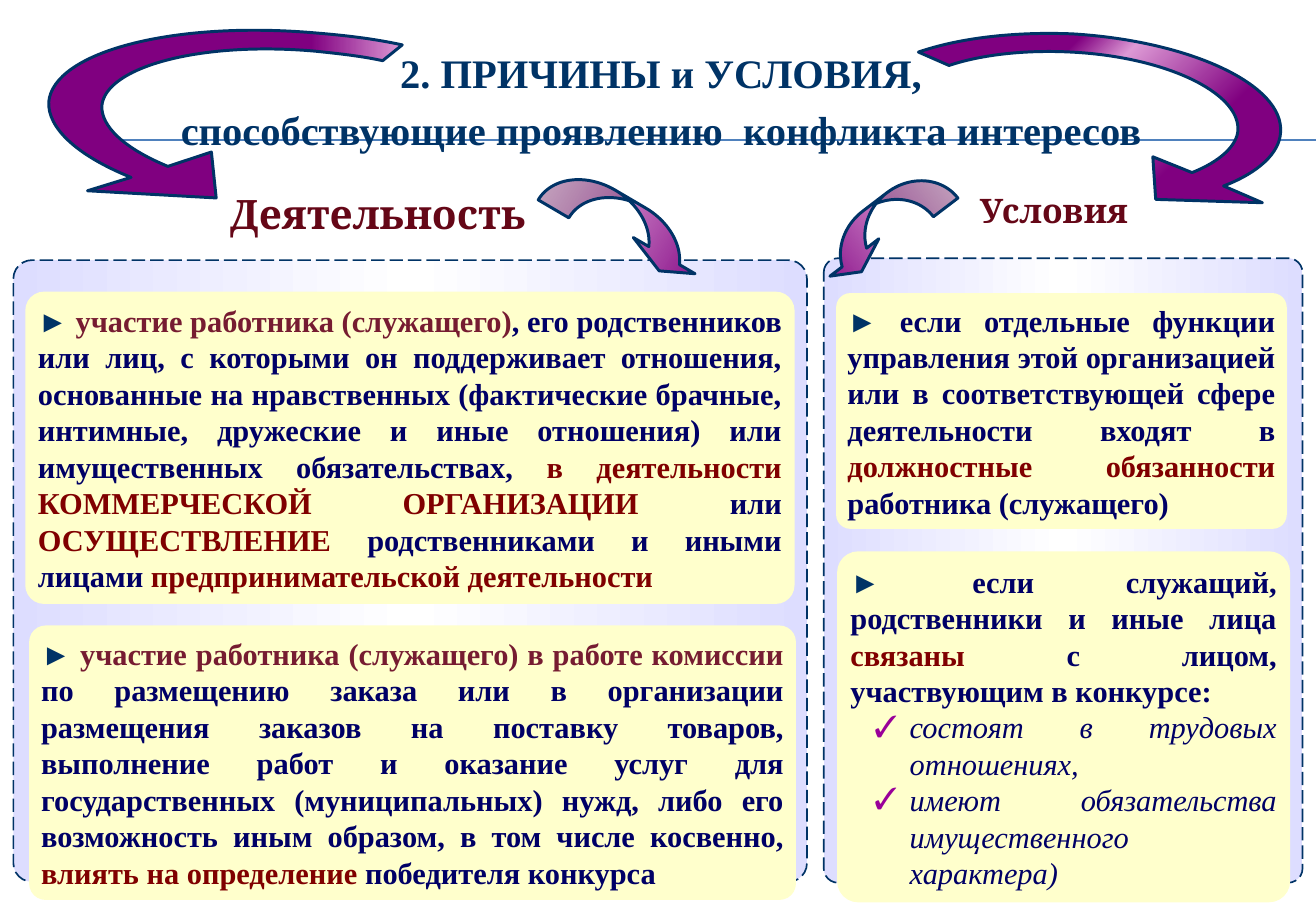
"""Slide on the causes and conditions that lead to a conflict of interest."""
from lxml import etree
from pptx import Presentation, util as u
from pptx.dml.color import RGBColor
from pptx.enum import dml, shapes, text
from pptx.oxml.ns import qn

NAVY = RGBColor(0x00, 0x33, 0x66)
INK = RGBColor(0x00, 0x00, 0x66)
WINE = RGBColor(0x76, 0x1C, 0x31)
MAROON = RGBColor(0x80, 0x00, 0x00)
BURGUNDY = RGBColor(0x65, 0x07, 0x17)
RULE_BLUE = RGBColor(0x4F, 0x81, 0xBD)
CREAM = RGBColor(0xFF, 0xFF, 0xCC)
LILAC = RGBColor(0xDD, 0xDD, 0xFF)
WHITE = RGBColor(0xFF, 0xFF, 0xFF)
PINK = RGBColor(0xFE, 0xDA, 0xF6)
ORCHID = RGBColor(0xDD, 0x99, 0xD5)
PURPLE = RGBColor(0x80, 0x00, 0x80)
TICK = RGBColor(0x99, 0x00, 0x99)
SERIF = "Times New Roman"


def paint(shape, stops, line_width, angle=0):
    """Give a shape a gradient and a navy outline."""
    shape.shadow.inherit = False
    shape.fill.gradient()
    shape.fill.gradient_angle = angle
    stop_list = shape.element.spPr.find(qn("a:gradFill")).find(qn("a:gsLst"))
    for old_stop in list(stop_list):
        stop_list.remove(old_stop)
    for percent, color in stops:
        stop = etree.SubElement(stop_list, qn("a:gs"), pos=str(percent * 1000))
        etree.SubElement(stop, qn("a:srgbClr"), val=str(color))
    shape.line.color.rgb = NAVY
    shape.line.width = u.Pt(line_width)


def style(run, font_name, size, color, bold=True):
    """Format one run; text that is not bold is italic."""
    run.font.name = font_name
    run.font.size = u.Pt(size)
    run.font.color.rgb = color
    run.font.bold = bold
    run.font.italic = not bold


deck = Presentation()
deck.slide_width, deck.slide_height = u.Cm(27.51), u.Cm(19.05)
slide = deck.slides.add_slide(deck.slide_layouts[6])
items = slide.shapes

for rule_y in (2.92, 2.93):
    rule = items.add_connector(shapes.MSO_CONNECTOR.STRAIGHT, u.Cm(1.55), u.Cm(rule_y), u.Cm(27.51), u.Cm(rule_y))
    rule.line.color.rgb = RULE_BLUE
    rule.line.width = u.Pt(0.75)
    etree.SubElement(rule.element.spPr, qn("a:effectLst"))

for place in ((17.22, 5.4, 10.01, 13.06), (0.28, 5.44, 16.59, 13)):
    panel = items.add_shape(shapes.MSO_SHAPE.ROUNDED_RECTANGLE, *map(u.Cm, place))
    panel.adjustments[0] = 0.03
    paint(panel, [(0, LILAC), (50, WHITE), (100, LILAC)], 1)
    panel.line.dash_style = dml.MSO_LINE.LONG_DASH

headings = [
    ((3.52, 0.88, 20.6, 1.73), SERIF, 24, NAVY,
     "2. ПРИЧИНЫ и УСЛОВИЯ,\nспособствующие проявлению  конфликта интересов"),
    ((4.6, 3.82, 6.6, 1.02), "Cambria", 24, BURGUNDY, "Деятельность"),
    ((20.14, 3.84, 3.78, 0.94), "Cambria", 20, BURGUNDY, "Условия"),
]
for place, font_name, size, color, wording in headings:
    heading = items.add_textbox(*map(u.Cm, place)).text_frame
    heading.word_wrap = False
    heading.auto_size = text.MSO_AUTO_SIZE.NONE
    heading.margin_left = heading.margin_right = 0
    heading.text = wording
    for number, line in enumerate(heading.paragraphs):
        line.alignment = text.PP_ALIGN.CENTER
        line.space_before = u.Pt(4.8 if number else 0)
        style(line.runs[0], font_name, size, color)

cards = [
    ((0.53, 6.1, 16.08, 6.53), [
        ("участие работника (служащего)", WINE),
        (", его родственников или лиц, с которыми он поддерживает отношения, основанные на нравственных "
         "(фактические брачные, интимные, дружеские и иные отношения) или имущественных обязательствах, ", INK),
        ("в деятельности КОММЕРЧЕСКОЙ ОРГАНИЗАЦИИ", MAROON),
        (" или ", INK),
        ("ОСУЩЕСТВЛЕНИЕ ", MAROON),
        ("родственниками и иными лицами ", INK),
        ("предпринимательской деятельности", MAROON)], []),
    ((0.61, 13.08, 16.03, 5.74), [
        ("участие работника (служащего) в работе комиссии", WINE),
        (" по размещению заказа или в организации размещения заказов на поставку товаров, выполнение работ "
         "и оказание услуг для государственных (муниципальных) нужд, либо его возможность иным образом, "
         "в том числе косвенно, ", INK),
        ("влиять на определение ", MAROON),
        ("победителя конкурса", INK)], []),
    ((17.48, 6.13, 9.42, 4.93), [
        ("если отдельные функции управления этой организацией или в соответствующей сфере "
         "деятельности входят в ", INK),
        ("должностные обязанности ", MAROON),
        ("работника (служащего)", INK)], []),
    ((17.5, 11.53, 9.47, 7.34), [
        ("если служащий, родственники и иные лица ", INK),
        ("связаны", MAROON),
        (" с лицом, участвующим в конкурсе:", INK)],
     ["состоят в трудовых отношениях,", "имеют обязательства имущественного характера)"]),
]
for place, statement, ties in cards:
    card = items.add_shape(shapes.MSO_SHAPE.ROUNDED_RECTANGLE, *map(u.Cm, place))
    card.adjustments[0] = 0.06
    card.shadow.inherit = False
    card.fill.solid()
    card.fill.fore_color.rgb = CREAM
    card.line.fill.background()
    frame = card.text_frame
    frame.word_wrap = True
    frame.vertical_anchor = text.MSO_ANCHOR.MIDDLE
    frame.margin_left = frame.margin_right = u.Cm(0.15)
    frame.margin_top = frame.margin_bottom = u.Cm(0.1)
    reason = frame.paragraphs[0]
    reason.alignment = text.PP_ALIGN.JUSTIFY
    for wording, color in [("► ", NAVY)] + statement:
        run = reason.add_run()
        run.text = wording
        style(run, SERIF, 18, color)
    for wording in ties:
        tie = frame.add_paragraph()
        tie.text = wording
        tie.level = 1
        tie.alignment = text.PP_ALIGN.JUSTIFY
        properties = tie._p.get_or_add_pPr()
        properties.set("marL", str(u.Cm(1.24)))
        properties.set("indent", str(-u.Cm(0.74)))
        tick_color = etree.SubElement(properties, qn("a:buClr"))
        etree.SubElement(tick_color, qn("a:srgbClr"), val=str(TICK))
        etree.SubElement(properties, qn("a:buFont"), typeface=SERIF)
        etree.SubElement(properties, qn("a:buChar"), char="✓")
        style(tie.runs[0], SERIF, 18, INK, bold=False)

# Outlines in hundredths of a centimetre: pairs are corners, sixes are cubic curves.
sweeps = [
    ([(351, 348), (259, 310, 211, 264, 213, 221), (221, 140, 419, 86, 658, 107),
      (706, 112, 754, 117, 800, 127), (841, 94), (782, 81, 721, 74, 660, 69),
      (361, 43, 112, 109, 102, 213), (99, 267, 160, 325, 274, 371),
      (183, 399), (452, 414), (442, 318)],
     [(0, PURPLE), (74, PURPLE), (100, ORCHID)], 0),
    ([(2492, 361), (2550, 338, 2586, 305, 2588, 272), (2591, 193, 2436, 119, 2240, 109),
      (2146, 104, 2052, 114, 1984, 137), (1920, 109), (2007, 79, 2123, 66, 2243, 71),
      (2489, 86, 2685, 178, 2677, 277), (2675, 320, 2631, 361, 2558, 389),
      (2639, 424), (2416, 417), (2410, 328)],
     [(0, PURPLE), (31, PURPLE), (43, ORCHID), (73, PURPLE), (100, PURPLE)], 315),
]
for outline, stops, angle in sweeps:
    corners = [segment[-2:] for segment in outline]
    left, top = map(min, zip(*corners))
    builder = items.build_freeform(*corners[0], scale=u.Cm(0.01))
    builder.add_line_segments(corners[1:], close=True)
    sweep = builder.convert_to_shape()
    for segment, edge in zip(outline[1:], list(sweep.element.spPr.iter(qn("a:lnTo")))):
        if len(segment) == 6:
            curve = etree.Element(qn("a:cubicBezTo"))
            for x, y in zip(segment[::2], segment[1::2]):
                etree.SubElement(curve, qn("a:pt"), x=str(x - left), y=str(y - top))
            edge.getparent().replace(edge, curve)
    paint(sweep, stops, 1.75, angle)

pointers = [
    ((11.25, 4.19, 3.68, 0.99), 30.4, (0.75, 1.51, 0.33), False),
    ((16.87, 4.22, 3.18, 0.99), 322.6, (0.65, 1.3, 0.33), True),
]
for place, angle, bends, mirrored in pointers:
    pointer = items.add_shape(shapes.MSO_SHAPE.CURVED_DOWN_ARROW, *map(u.Cm, place))
    for index, bend in enumerate(bends):
        pointer.adjustments[index] = bend
    pointer.rotation = angle
    if mirrored:
        pointer.element.spPr.find(qn("a:xfrm")).set("flipH", "1")
    paint(pointer, [(0, PINK), (100, PURPLE)], 1.75)

deck.save("out.pptx")
